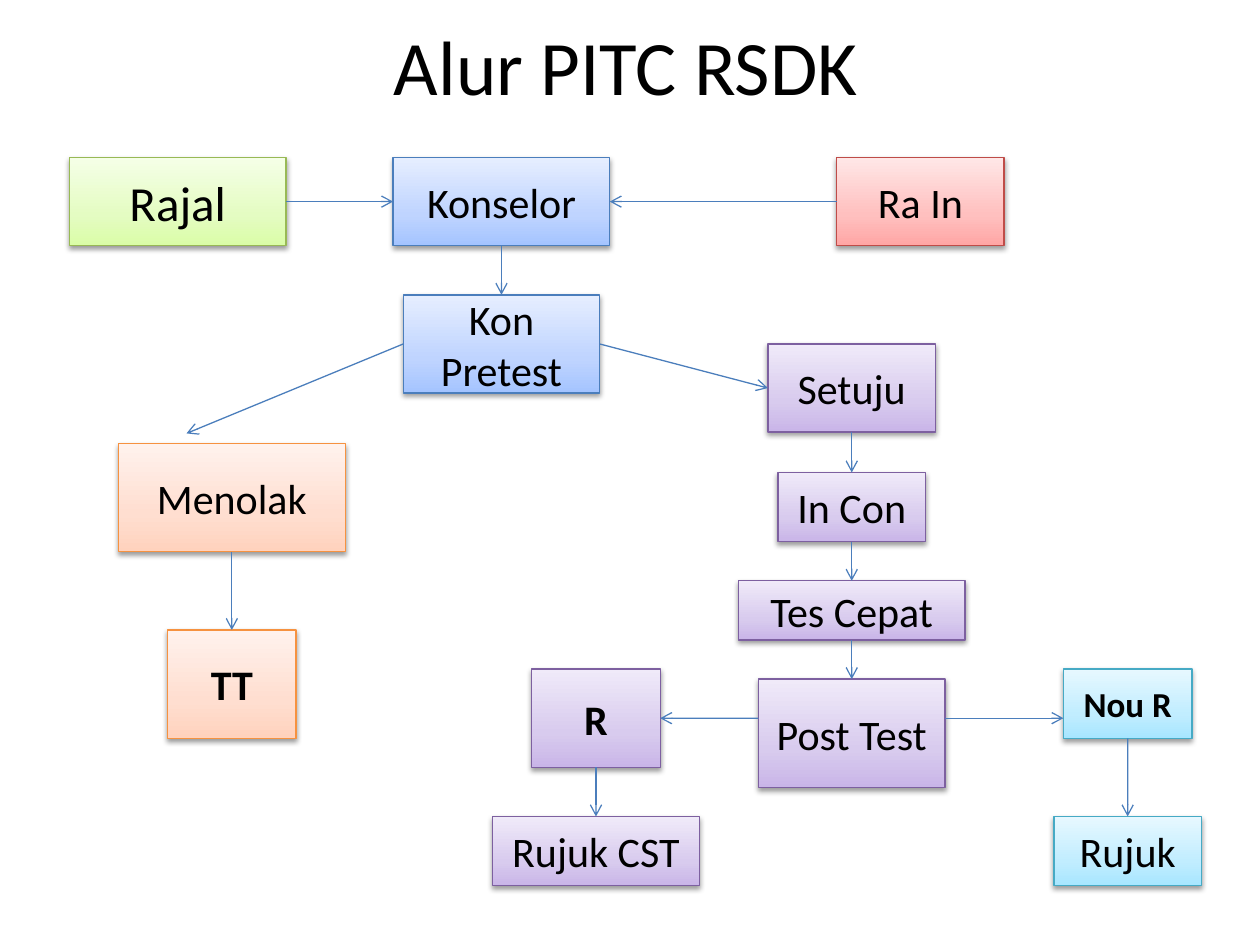
from copy import deepcopy

from lxml import etree
from pptx import Presentation
from pptx.dml.color import RGBColor
from pptx.enum.shapes import MSO_CONNECTOR, MSO_SHAPE
from pptx.enum.text import MSO_ANCHOR, PP_ALIGN
from pptx.oxml.ns import qn
from pptx.util import Inches, Pt

RECT, STRAIGHT = MSO_SHAPE.RECTANGLE, MSO_CONNECTOR.STRAIGHT
CENTER, MIDDLE = PP_ALIGN.CENTER, MSO_ANCHOR.MIDDLE
TOP, LEFT, BOTTOM, RIGHT = range(4)

BLACK = RGBColor(0x00, 0x00, 0x00)
ARROW = RGBColor(0x4B, 0x7E, 0xBC)


def palette(*codes):
    return [RGBColor.from_string(code) for code in codes]


# Outline, then gradient colours from bottom to top
GREEN = palette("98B955", "DAFDA7", "E4FCC2", "F5FFE7")
BLUE = palette("4B7EBC", "A4C4FF", "BFD4FF", "E6EEFF")
RED = palette("BF4C48", "FFA6A5", "FFC0BF", "FFE7E7")
ORANGE = palette("F69240", "FFD2BD", "FFDED0", "FFF2ED")
PURPLE = palette("7D60A0", "C9B5E8", "D8CBEE", "F0EAF9")
CYAN = palette("46AAC5", "A7E6FF", "C1EDFF", "E7F8FF")


def set_text(tf, text, size=24, bold=False, color=BLACK):
    tf.word_wrap = True
    tf.vertical_anchor = MIDDLE
    p = tf.paragraphs[0]
    p.alignment = CENTER
    r = p.add_run()
    r.text = text
    r.font.name = "Calibri"
    r.font.size = Pt(size)
    r.font.bold = bold
    r.font.color.rgb = color


def set_gradient(sp, colors):
    sp.fill.gradient()
    sp.fill.gradient_angle = 90
    first = sp._element.spPr.find(".//" + qn("a:gs"))
    first.addnext(deepcopy(first))
    for stop, position, color in zip(sp.fill.gradient_stops, (0, 0.35, 1), colors):
        stop.position = position
        stop.color.rgb = color


def set_shadow(sp):
    sp.shadow.inherit = False
    effects = sp._element.spPr.find(qn("a:effectLst"))
    shadow = etree.SubElement(effects, qn("a:outerShdw"), blurRad=str(Pt(3.1)),
                              dist=str(Pt(1.6)), dir="5400000", rotWithShape="0")
    color = etree.SubElement(shadow, qn("a:srgbClr"), val="000000")
    etree.SubElement(color, qn("a:alpha"), val="38000")


def add_box(slide, text, x, y, w, h, colors, **fmt):
    sp = slide.shapes.add_shape(RECT, Inches(x), Inches(y), Inches(w), Inches(h))
    set_gradient(sp, colors[1:])
    sp.line.color.rgb = colors[0]
    sp.line.width = Pt(0.75)
    set_shadow(sp)
    set_text(sp.text_frame, text, **fmt)
    return sp


def add_arrow(slide, start, end):
    """Each end is a (box, side) pair to join, or a point (x, y) in inches."""
    cx = slide.shapes.add_connector(STRAIGHT, 0, 0, 0, 0)
    cx.line.color.rgb = ARROW
    cx.line.width = Pt(0.75)
    etree.SubElement(cx.line._get_or_add_ln(), qn("a:tailEnd"), type="arrow")
    etree.SubElement(cx._element.spPr, qn("a:effectLst"))
    # Free points go first so that joined ends are measured last
    if isinstance(start[0], (int, float)):
        cx.begin_x, cx.begin_y = map(Inches, start)
    else:
        cx.begin_connect(*start)
    if isinstance(end[0], (int, float)):
        cx.end_x, cx.end_y = map(Inches, end)
    else:
        cx.end_connect(*end)


def add_column(slide, center, rows, colors):
    """Stack boxes on one centre line, joined by downward arrows."""
    boxes = [add_box(slide, text, center - w / 2, y, w, h, colors, **fmt)
             for text, y, w, h, fmt in rows]
    for upper, lower in zip(boxes, boxes[1:]):
        add_arrow(slide, (upper, BOTTOM), (lower, TOP))
    return boxes


def add_title(slide, text, x, y, w, h):
    title = slide.shapes.title
    title.left, title.top, title.width, title.height = map(Inches, (x, y, w, h))
    set_text(title.text_frame, text, size=44)


def add_intake(slide, x, y):
    """Both entrances lead to the counsellor; returns the pretest box."""
    h = 0.7
    rajal = add_box(slide, "Rajal", x, y, 1.72, h, GREEN, size=28)
    ra_in = add_box(slide, "Ra In", x + 6.09, y, 1.33, h, RED)
    konselor, pretest = add_column(slide, x + 3.43, [
        ("Konselor", y, 1.72, h, {}),
        ("Kon Pretest", y + 1.09, 1.56, 0.78, {}),
    ], BLUE)
    add_arrow(slide, (rajal, RIGHT), (konselor, LEFT))
    add_arrow(slide, (ra_in, LEFT), (konselor, RIGHT))
    return pretest


def add_refusal(slide, x, y, pretest):
    center = x + 0.9
    add_column(slide, center, [
        ("Menolak", y, 1.8, 0.86, {}),
        ("TT", y + 1.48, 1.02, 0.86, {"bold": True}),
    ], ORANGE)
    add_arrow(slide, (pretest, LEFT), (x + 0.54, y - 0.08))


def add_consent(slide, x, y, pretest):
    center = x + 0.9
    setuju = add_column(slide, center, [
        ("Setuju", y, 1.33, 0.7, {}),
        ("In Con", y + 1.02, 1.17, 0.55, {}),
        ("Tes Cepat", y + 1.88, 1.8, 0.47, {}),
        ("Post Test", y + 2.66, 1.48, 0.86, {}),
    ], PURPLE)[0]
    add_arrow(slide, (pretest, RIGHT), (setuju, LEFT))


def add_results(slide, x, y):
    """Test outcomes to the left and right of the post-test box."""
    reactive = add_column(slide, x + 0.82, [
        ("R", y, 1.02, 0.78, {"bold": True}),
        ("Rujuk CST", y + 1.17, 1.64, 0.55, {}),
    ], PURPLE)[0]
    add_column(slide, x + 5.04, [
        ("Nou R", y, 1.02, 0.55, {"size": 20, "bold": True}),
        ("Rujuk", y + 1.17, 1.17, 0.55, {}),
    ], CYAN)
    arrow_y = y + 0.39
    add_arrow(slide, (x + 2.11, arrow_y), (reactive, RIGHT))
    add_arrow(slide, (x + 3.59, arrow_y), (x + 4.53, arrow_y))


def main():
    prs = Presentation()
    prs.slide_width, prs.slide_height = Inches(10), Inches(7.5)
    slide = prs.slides.add_slide(prs.slide_layouts[5])
    add_title(slide, "Alur PITC RSDK", 0.47, 0, 9, 1.03)
    pretest = add_intake(slide, 0.55, 1.25)
    add_refusal(slide, 0.94, 3.52, pretest)
    add_consent(slide, 5.86, 2.73, pretest)
    add_results(slide, 3.91, 5.31)
    prs.save("out.pptx")


if __name__ == "__main__":
    main()
